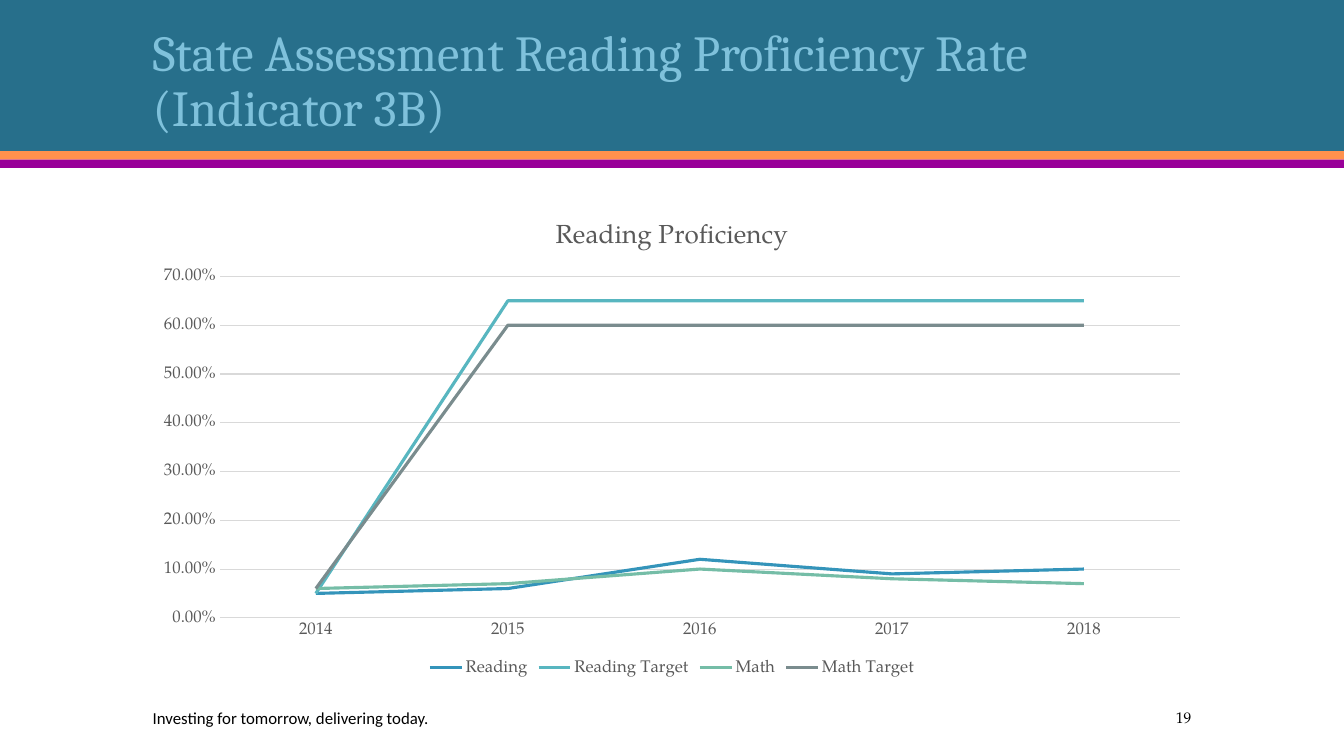
from dataclasses import dataclass

from pptx import Presentation
from pptx.chart.data import CategoryChartData
from pptx.dml.color import RGBColor
from pptx.enum.chart import XL_CHART_TYPE as ChartType, XL_LEGEND_POSITION as LegendPosition
from pptx.enum.chart import XL_TICK_MARK as TickMark
from pptx.enum.shapes import MSO_SHAPE as Shape
from pptx.enum.text import MSO_ANCHOR as Anchor, PP_ALIGN as Align
from pptx.slide import Slide
from pptx.util import Pt

TEAL = RGBColor(0x27, 0x6F, 0x8B)
ORANGE = RGBColor(0xFF, 0x91, 0x4D)
PURPLE = RGBColor(0x99, 0x00, 0x99)
SKY = RGBColor(0x7F, 0xC1, 0xDB)
BLACK = RGBColor(0x00, 0x00, 0x00)
GREY = RGBColor(0x59, 0x59, 0x59)
PALE_GREY = RGBColor(0xD9, 0xD9, 0xD9)
BLUE = RGBColor(0x34, 0x94, 0xBA)
AQUA = RGBColor(0x58, 0xB6, 0xC0)
GREEN = RGBColor(0x75, 0xBD, 0xA7)
SLATE = RGBColor(0x7A, 0x8C, 0x8E)

SERIF = "TeX Gyre Pagella"
SLIDE_WIDTH, SLIDE_HEIGHT = 960, 540
MARGIN = 102
CONTENT_WIDTH = 756
FOOTER_TOP, FOOTER_HEIGHT = 501.84, 21.6
NUMBER_WIDTH = 108


@dataclass
class Band:
    height: float
    color: RGBColor


@dataclass
class Label:
    text: str
    left: float
    top: float
    width: float
    height: float
    font: str
    size: float
    color: RGBColor
    anchor: Anchor = Anchor.MIDDLE
    align: Align = Align.LEFT
    line_spacing: float = 1.0


@dataclass
class Rate:
    name: str
    values: tuple[float, ...]
    color: RGBColor


BANDS = [Band(108, TEAL), Band(6, ORANGE), Band(6, PURPLE)]

LABELS = [
    Label("State Assessment Reading Proficiency Rate\v(Indicator 3B)", MARGIN, 20.16,
          CONTENT_WIDTH, 81.36, "Cambria", 36, SKY, Anchor.BOTTOM, line_spacing=0.9),
    Label("Investing for tomorrow, delivering today.", MARGIN, FOOTER_TOP,
          491.76, FOOTER_HEIGHT, "Calibri", 12, BLACK),
    Label("19", MARGIN + CONTENT_WIDTH - NUMBER_WIDTH, FOOTER_TOP,
          NUMBER_WIDTH, FOOTER_HEIGHT, SERIF, 11, BLACK, align=Align.RIGHT),
]

YEARS = ["2014", "2015", "2016", "2017", "2018"]
RATES = [
    Rate("Reading", (0.05, 0.06, 0.12, 0.09, 0.1), BLUE),
    Rate("Reading Target", (0.05, 0.65, 0.65, 0.65, 0.65), AQUA),
    Rate("Math", (0.06, 0.07, 0.1, 0.08, 0.07), GREEN),
    Rate("Math Target", (0.06, 0.6, 0.6, 0.6, 0.6), SLATE),
]


def style_font(font, name: str, size: float, color: RGBColor) -> None:
    font.name = name
    font.size = Pt(size)
    font.bold = False
    font.color.rgb = color


def style_line(line, color: RGBColor, width: float) -> None:
    line.color.rgb = color
    line.width = Pt(width)


def draw_bands(slide: Slide, bands: list[Band]) -> None:
    top = 0
    for band in bands:
        stripe = slide.shapes.add_shape(
            Shape.RECTANGLE, Pt(0), Pt(top), Pt(SLIDE_WIDTH), Pt(band.height))
        stripe.shadow.inherit = False
        stripe.fill.solid()
        stripe.fill.fore_color.rgb = band.color
        stripe.line.fill.background()
        top += band.height


def draw_label(slide: Slide, label: Label) -> None:
    box = slide.shapes.add_textbox(
        Pt(label.left), Pt(label.top), Pt(label.width), Pt(label.height))
    frame = box.text_frame
    frame.word_wrap = True
    frame.vertical_anchor = label.anchor
    paragraph = frame.paragraphs[0]
    paragraph.text = label.text
    paragraph.alignment = label.align
    paragraph.line_spacing = label.line_spacing
    style_font(paragraph.font, label.font, label.size, label.color)


def draw_chart(slide: Slide, rates: list[Rate]) -> None:
    data = CategoryChartData(number_format="0.00%")
    data.categories = YEARS
    for rate in rates:
        data.add_series(rate.name, rate.values)
    chart = slide.shapes.add_chart(
        ChartType.LINE, Pt(MARGIN), Pt(144), Pt(CONTENT_WIDTH), Pt(342), data).chart
    style_font(chart.font, SERIF, 10, BLACK)

    chart.has_title = True
    heading = chart.chart_title.text_frame.paragraphs[0]
    heading.text = "Reading Proficiency"
    style_font(heading.font, SERIF, 18.6, GREY)
    chart.chart_title.include_in_layout = False

    chart.has_legend = True
    chart.legend.position = LegendPosition.BOTTOM
    chart.legend.include_in_layout = False
    style_font(chart.legend.font, SERIF, 12, GREY)

    years, percents = chart.category_axis, chart.value_axis
    for axis in (years, percents):
        axis.major_tick_mark = axis.minor_tick_mark = TickMark.NONE
        style_font(axis.tick_labels.font, SERIF, 12, GREY)
    style_line(years.format.line, PALE_GREY, 0.75)
    percents.format.line.fill.background()
    percents.has_major_gridlines = True
    style_line(percents.major_gridlines.format.line, PALE_GREY, 0.75)
    percents.minimum_scale, percents.maximum_scale, percents.major_unit = 0, 0.7, 0.1
    percents.tick_labels.number_format = "0.00%"
    percents.tick_labels.number_format_is_linked = False

    plot = chart.plots[0]
    plot.vary_by_categories = False
    for series, rate in zip(plot.series, rates):
        series.smooth = False
        style_line(series.format.line, rate.color, 2.25)


def main() -> None:
    deck = Presentation()
    deck.slide_width, deck.slide_height = Pt(SLIDE_WIDTH), Pt(SLIDE_HEIGHT)
    slide = deck.slides.add_slide(deck.slide_layouts[6])
    draw_bands(slide, BANDS)
    draw_chart(slide, RATES)
    for label in LABELS:
        draw_label(slide, label)
    deck.save("out.pptx")


if __name__ == "__main__":
    main()
